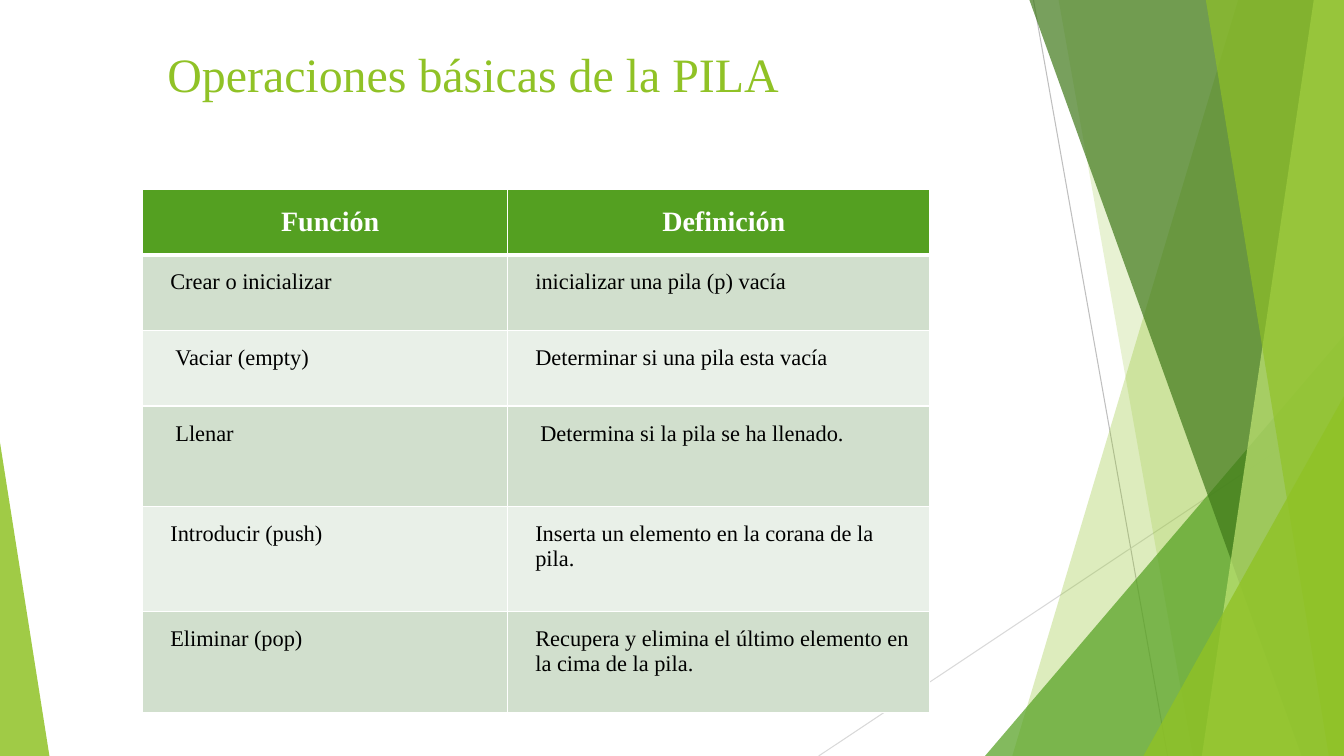
from lxml import etree
from pptx import Presentation
from pptx.dml.color import RGBColor
from pptx.enum.shapes import MSO_CONNECTOR, MSO_SHAPE
from pptx.enum.text import MSO_ANCHOR, MSO_AUTO_SIZE, PP_ALIGN
from pptx.oxml.ns import qn
from pptx.util import Inches, Pt

STRAIGHT = MSO_CONNECTOR.STRAIGHT
TRIANGLE = MSO_SHAPE.ISOSCELES_TRIANGLE
LEFT, CENTER = PP_ALIGN.LEFT, PP_ALIGN.CENTER
TOP = MSO_ANCHOR.TOP
NO_AUTOFIT = MSO_AUTO_SIZE.NONE

WIDTH, HEIGHT = 13.33, 7.5
FONT = "Times New Roman"
LIME = RGBColor(0x90, 0xC2, 0x26)
GREEN = RGBColor(0x54, 0xA0, 0x21)
FOREST = RGBColor(0x3F, 0x78, 0x19)
PALE_LIME = RGBColor(0xC0, 0xE4, 0x74)
BAND_DARK = RGBColor(0xD1, 0xDF, 0xCD)
BAND_LIGHT = RGBColor(0xE9, 0xF0, 0xE8)
GRAY = RGBColor(0xBF, 0xBF, 0xBF)
LIGHT_GRAY = RGBColor(0xD9, 0xD9, 0xD9)
WHITE = RGBColor(0xFF, 0xFF, 0xFF)
BLACK = RGBColor(0, 0, 0)

TITLE_BOX = (1.41, 0.39, 8.15, 1.11)
TABLE_BOX = (1.41, 1.88, 7.81, 5.18)
COLUMN_WIDTHS = (3.62, 4.19)
ROW_HEIGHTS = (0.64, 0.75, 0.75, 1, 1.04, 1)
LEADING_GAP = 0.05

# Each cell: text and extra left indent
OPERATIONS = [
    (("Función", 0), ("Definición", 0)),
    (("Crear o inicializar", 0), ("inicializar una pila (p) vacía", 0)),
    (("Vaciar (empty)", LEADING_GAP), ("Determinar si una pila esta vacía", 0)),
    (("Llenar", LEADING_GAP),
     ("Determina si la pila se ha llenado.", LEADING_GAP)),
    (("Introducir (push)", 0),
     ("Inserta un elemento en la corana de la pila.", 0)),
    (("Eliminar (pop)", 0),
     ("Recupera y elimina el último elemento en la cima de la pila.", 0)),
]


def paint(facet, color, opacity):
    """Fill a facet with a translucent colour, without outline or shadow."""
    facet.shadow.inherit = False
    facet.line.fill.background()
    facet.fill.solid()
    facet.fill.fore_color.rgb = color
    tone = facet.fill._xPr.find(".//" + qn("a:srgbClr"))
    etree.SubElement(tone, qn("a:alpha"), val=str(opacity * 1000))


def add_ray(slide, start, end, color):
    ray = slide.shapes.add_connector(
        STRAIGHT, *(Inches(v) for v in (*start, *end)))
    ray.line.color.rgb = color
    ray.line.width = Pt(0.75)
    etree.SubElement(ray._element.spPr, qn("a:effectLst"))


def add_facet(slide, top_x, bottom_x, color, opacity):
    """Full-height facet from a slanted left edge to the slide's right edge."""
    corners = [(Inches(x), Inches(y)) for x, y in (
        (top_x, 0), (WIDTH, 0), (WIDTH, HEIGHT), (bottom_x, HEIGHT))]
    builder = slide.shapes.build_freeform(*corners[0])
    builder.add_line_segments(corners[1:], close=True)
    paint(builder.convert_to_shape(), color, opacity)


def add_corner(slide, left, width, height, apex, color, opacity):
    """Right triangle standing on the slide's bottom edge."""
    corner = slide.shapes.add_shape(
        TRIANGLE, Inches(left), Inches(HEIGHT - height),
        Inches(width), Inches(height))
    corner.adjustments[0] = apex
    paint(corner, color, opacity)


def add_backdrop(slide):
    add_ray(slide, (10.25, 0), (11.58, HEIGHT), GRAY)
    add_ray(slide, (WIDTH, 4.03), (8.12, HEIGHT), LIGHT_GRAY)
    add_facet(slide, 12.28, 10.04, LIME, 30)
    add_facet(slide, 10.5, 11.83, LIME, 20)
    add_corner(slide, 9.77, 3.56, 4.17, 1, GREEN, 72)
    add_facet(slide, 10.21, 12.91, FOREST, 70)
    add_facet(slide, 13.03, 11.92, PALE_LIME, 70)
    add_facet(slide, 11.96, 13.18, LIME, 65)
    add_corner(slide, 11.34, 1.99, 3.57, 1, LIME, 80)
    add_corner(slide, 0, 0.49, 3.11, 0, LIME, 85)


def write(paragraph, text, size, color, bold=False):
    run = paragraph.add_run()
    run.text = text
    run.font.name = FONT
    run.font.size = Pt(size)
    run.font.bold = bold
    run.font.color.rgb = color


def add_title(slide, box):
    title = slide.shapes.title
    title.left, title.top, title.width, title.height = map(Inches, box)
    frame = title.text_frame
    frame.auto_size = NO_AUTOFIT
    frame.word_wrap = True
    frame.vertical_anchor = TOP
    frame.margin_left = frame.margin_right = Inches(0.25)
    frame.margin_top, frame.margin_bottom = Inches(0.16), 0
    heading = frame.paragraphs[0]
    heading.alignment = LEFT
    heading.line_spacing = 0.8
    write(heading, "Operaciones básicas de la PILA", 34.2, LIME)


def set_borders(cell, bottom_width, top_width):
    properties = cell._tc.get_or_add_tcPr()
    for side, width in (("L", 1), ("R", 1), ("T", top_width), ("B", bottom_width)):
        border = etree.SubElement(
            properties, qn("a:ln" + side), w=str(Pt(width)))
        solid = etree.SubElement(border, qn("a:solidFill"))
        etree.SubElement(solid, qn("a:srgbClr"), val=str(WHITE))


def fill_cell(cell, row, text, indent):
    is_header = row == 0
    set_borders(cell, 3 if is_header else 1, 3 if row == 1 else 1)
    cell.fill.solid()
    cell.fill.fore_color.rgb = (
        GREEN if is_header else BAND_DARK if row % 2 else BAND_LIGHT)
    padding = Inches(0.17 if is_header else 0.15)
    cell.margin_left = Inches(0.28 + indent)
    cell.margin_right = cell.margin_top = cell.margin_bottom = padding
    cell.vertical_anchor = TOP
    paragraph = cell.text_frame.paragraphs[0]
    paragraph.alignment = CENTER if is_header else LEFT
    write(paragraph, text, 20 if is_header else 16,
          WHITE if is_header else BLACK, is_header)


def add_operations(slide, box):
    table = slide.shapes.add_table(
        len(OPERATIONS), len(COLUMN_WIDTHS), *map(Inches, box)).table
    table.horz_banding = False
    for column, width in zip(table.columns, COLUMN_WIDTHS):
        column.width = Inches(width)
    for row, height in zip(table.rows, ROW_HEIGHTS):
        row.height = Inches(height)
    for r, operation in enumerate(OPERATIONS):
        for c, (text, indent) in enumerate(operation):
            fill_cell(table.cell(r, c), r, text, indent)


def main():
    deck = Presentation()
    deck.slide_width, deck.slide_height = Inches(WIDTH), Inches(HEIGHT)
    slide = deck.slides.add_slide(deck.slide_layouts[5])
    add_backdrop(slide)
    add_title(slide, TITLE_BOX)
    add_operations(slide, TABLE_BOX)
    deck.save("out.pptx")


if __name__ == "__main__":
    main()
